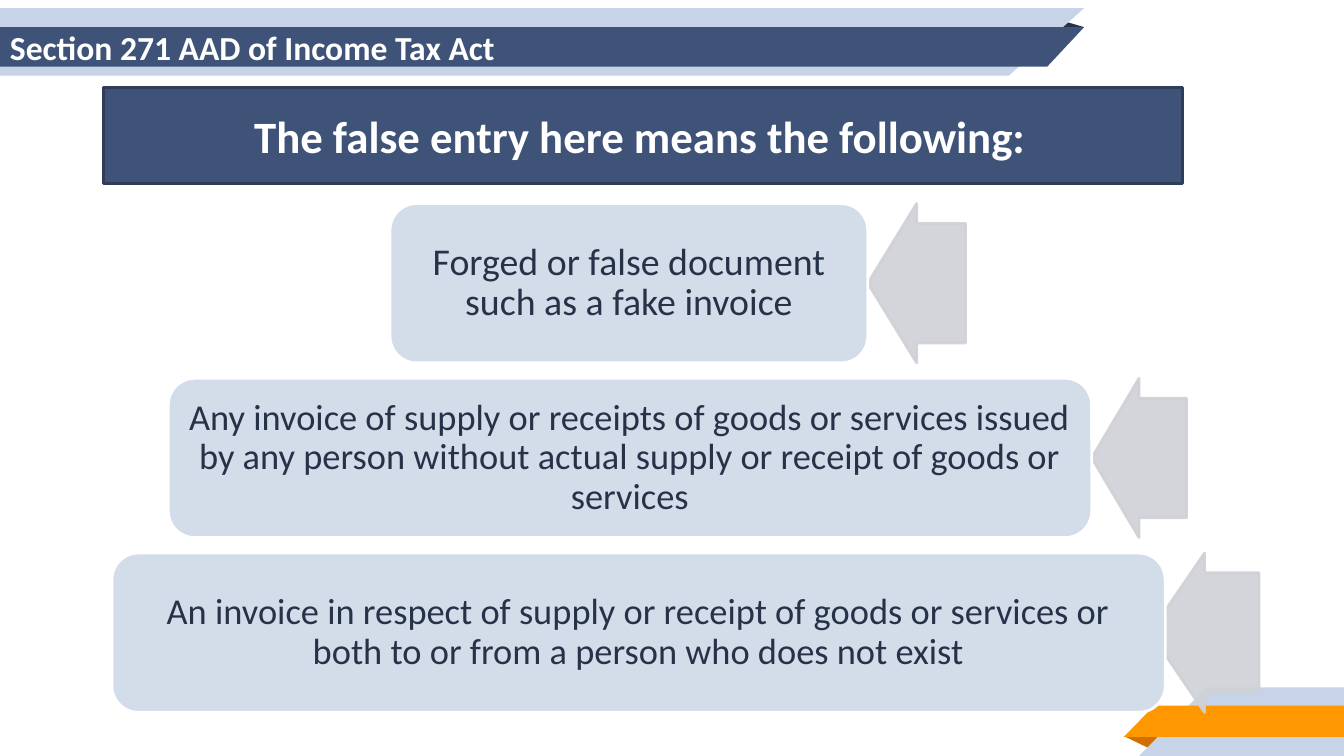
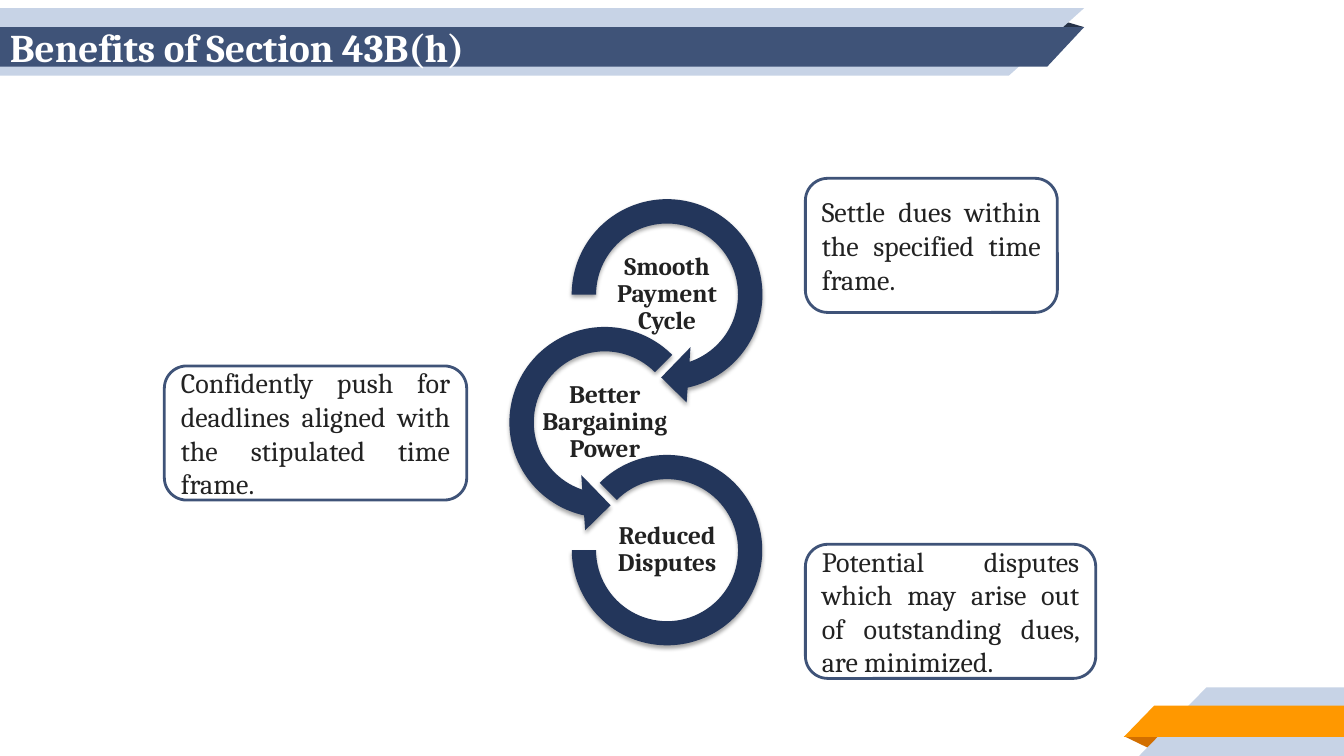
from lxml import etree
from pptx import Presentation
from pptx.dml.color import RGBColor
from pptx.enum.shapes import MSO_SHAPE
from pptx.enum.text import MSO_ANCHOR, PP_ALIGN
from pptx.oxml.ns import qn
from pptx.util import Pt

RECT = MSO_SHAPE.RECTANGLE
ROUNDED = MSO_SHAPE.ROUNDED_RECTANGLE
LEFT_ARROW = MSO_SHAPE.LEFT_ARROW
RING_RIGHT = MSO_SHAPE.CIRCULAR_ARROW
RING_LEFT = MSO_SHAPE.LEFT_CIRCULAR_ARROW
RING_END = MSO_SHAPE.BLOCK_ARC
MIDDLE = MSO_ANCHOR.MIDDLE
LEFT, CENTER, JUSTIFY = PP_ALIGN.LEFT, PP_ALIGN.CENTER, PP_ALIGN.JUSTIFY

WIDTH, HEIGHT = 960, 540


def rgb(hex_color):
    return RGBColor.from_string(hex_color)


class Deck:
    SANS, SERIF = "Calibri", "Cambria"
    WHITE, INK, NIGHT = "FFFFFF", "222222", "263248"
    NAVY, NAVY_EDGE, RING = "3F5378", "2F3D59", "23365B"
    PALE, BUBBLE, GREY = "C7D3E6", "D3DCE9", "CFD1D6"
    ORANGE, RUST = "FF9800", "D26F00"

    # Ribbon outlines, from back to front
    RIBBONS = (
        (NIGHT, [(720.7, 19.4), (738, 8.6), (774.4, 19.4)]),
        (PALE, [(0, 5.8), (774.4, 5.8), (720.7, 54), (0, 54)]),
        (NAVY, [(0, 19.4), (774.4, 19.4), (748, 47.7), (0, 47.7)]),
        (RUST, [(802.8, 525.8), (830.9, 525.8), (821.8, 535)]),
        (PALE, [(813.6, HEIGHT), (861.8, 491), (WIDTH, 491), (WIDTH, HEIGHT)]),
        (ORANGE, [(802.8, 526.3), (824.5, 504), (WIDTH, 504), (WIDTH, 526.3)]),
    )

    def __init__(self):
        self.prs = Presentation()
        self.prs.slide_width, self.prs.slide_height = Pt(WIDTH), Pt(HEIGHT)
        self.slide = None

    def new_slide(self, title, size, font):
        self.slide = self.prs.slides.add_slide(self.prs.slide_layouts[6])
        for color, points in self.RIBBONS:
            self.polygon(points, color)
        self.label((0, 9.5, 774, 48), title, size, font, self.WHITE,
                   bold=True, align=LEFT, margins=(7.2, 0, 7.2, 0))

    def paint(self, shape, fill, line=None):
        shape.shadow.inherit = False
        shape.fill.solid()
        shape.fill.fore_color.rgb = rgb(fill)
        if line:
            shape.line.color.rgb = rgb(line)
            shape.line.width = Pt(2)
        else:
            shape.line.fill.background()

    def polygon(self, points, fill):
        corners = [(Pt(x), Pt(y)) for x, y in points]
        builder = self.slide.shapes.build_freeform(*corners[0], scale=1.0)
        builder.add_line_segments(corners[1:], close=True)
        self.paint(builder.convert_to_shape(), fill)

    def shape(self, kind, box, fill, line=None, adjust=()):
        shape = self.slide.shapes.add_shape(kind, *map(Pt, box))
        self.paint(shape, fill, line)
        for index, value in enumerate(adjust):
            shape.adjustments[index] = value
        return shape

    def arrow(self, box):
        arrow = self.shape(LEFT_ARROW, box, self.GREY, self.GREY, (0.75, 0.5))
        for color in arrow._element.spPr.iter(qn("a:srgbClr")):
            etree.SubElement(color, qn("a:alpha"), val="90000")

    def ring(self, kind, center, size, adjust):
        x, y = center
        box = (x - size / 2, y - size / 2, size, size)
        ring = self.shape(kind, box, self.RING, adjust=adjust)
        effects = ring._element.spPr.find(qn("a:effectLst"))
        shadow = etree.SubElement(
            effects, qn("a:outerShdw"), blurRad=str(Pt(3.1)),
            dist=str(Pt(1.8)), dir="5400000", rotWithShape="0")
        color = etree.SubElement(shadow, qn("a:srgbClr"), val="000000")
        etree.SubElement(color, qn("a:alpha"), val="35000")

    def set_text(self, shape, text, size, font, color, bold=False, align=CENTER,
                 spacing=1.0, margins=(7.2, 3.6, 7.2, 3.6)):
        frame = shape.text_frame
        frame.word_wrap = True
        frame.vertical_anchor = MIDDLE
        (frame.margin_left, frame.margin_top,
         frame.margin_right, frame.margin_bottom) = map(Pt, margins)
        paragraph = frame.paragraphs[0]
        paragraph.alignment = align
        paragraph.line_spacing = spacing
        run = paragraph.add_run()
        run.text = text
        run.font.name, run.font.size, run.font.bold = font, Pt(size), bold
        run.font.color.rgb = rgb(color)

    def label(self, box, *text, **style):
        self.set_text(self.slide.shapes.add_textbox(*map(Pt, box)), *text, **style)


def false_entry_slide(deck):
    deck.new_slide("Section 271 AAD of Income Tax Act", 24, deck.SANS)

    # Stacked meanings: bubble left and width, arrow left and width
    meanings = (
        ("Forged or false document such as a fake invoice",
         27, 278.6, 341.3, 619.9, 69.8),
        ("Any invoice of supply or receipts of goods or services issued by any "
         "person without actual supply or receipt of goods or services",
         26, 120.2, 659.6, 779.8, 67.7),
        ("An invoice in respect of supply or receipt of goods or services or "
         "both to or from a person who does not exist",
         26, 79.9, 752.4, 821.5, 77.8),
    )
    top, pitch, height = 145.4, 124.8, 113.8
    for row, (text, size, left, width, arrow_left, arrow_width) in enumerate(meanings):
        y = top + row * pitch
        deck.arrow((arrow_left, y, arrow_width, height))
        bubble = deck.shape(ROUNDED, (left, y, width, height), deck.BUBBLE, deck.WHITE)
        deck.set_text(bubble, text, size, deck.SANS, deck.NIGHT,
                      spacing=0.9, margins=(7.9, 4, 7.9, 4))

    # Heading bar
    heading = deck.shape(RECT, (74.2, 62.6, 770.4, 68.4), deck.NAVY, deck.NAVY_EDGE)
    deck.set_text(heading, "The false entry here means the following:", 32,
                  deck.SANS, deck.WHITE, bold=True, margins=(7.2, 3.6, 11.5, 3.6))


def benefits_slide(deck):
    deck.new_slide("Benefits of Section 43B(h)", 28, deck.SERIF)

    # Chain of rings, each with its label in the middle
    benefits = (
        ("Smooth Payment Cycle", RING_RIGHT, 476.5, 158.4,
         (0.11, 11.42, 45, 108, 0.125)),
        ("Better Bargaining Power", RING_LEFT, 432, 158.4,
         (0.11, 11.42, 63, 189, 0.125)),
        ("Reduced Disputes", RING_END, 476.5, 136, (135, 108, 0.127)),
    )
    first_y, pitch, label_width, label_height = 210.4, 91.3, 100, 64
    for row, (text, kind, x, size, adjust) in enumerate(benefits):
        y = first_y + row * pitch
        deck.ring(kind, (x, y), size, adjust)
        box = (x - label_width / 2, y - label_height / 2, label_width, label_height)
        deck.label(box, text, 18, deck.SERIF, deck.INK, bold=True,
                   spacing=0.9, margins=(1, 1, 1, 1))

    # Explanation cards
    cards = (
        ("Settle dues within the specified time frame.", 575.3, 127.4, 180),
        ("Potential disputes which may arise out of outstanding dues, "
         "are minimized.", 575.3, 388.8, 207.4),
        ("Confidently push for deadlines aligned with the stipulated time "
         "frame.", 117.4, 261.4, 216),
    )
    for text, left, card_top, width in cards:
        card = deck.shape(ROUNDED, (left, card_top, width, 95.8), deck.WHITE, deck.NAVY)
        deck.set_text(card, text, 20, deck.SERIF, deck.INK, align=JUSTIFY)


def main():
    deck = Deck()
    false_entry_slide(deck)
    benefits_slide(deck)
    deck.prs.save("out.pptx")


if __name__ == "__main__":
    main()
